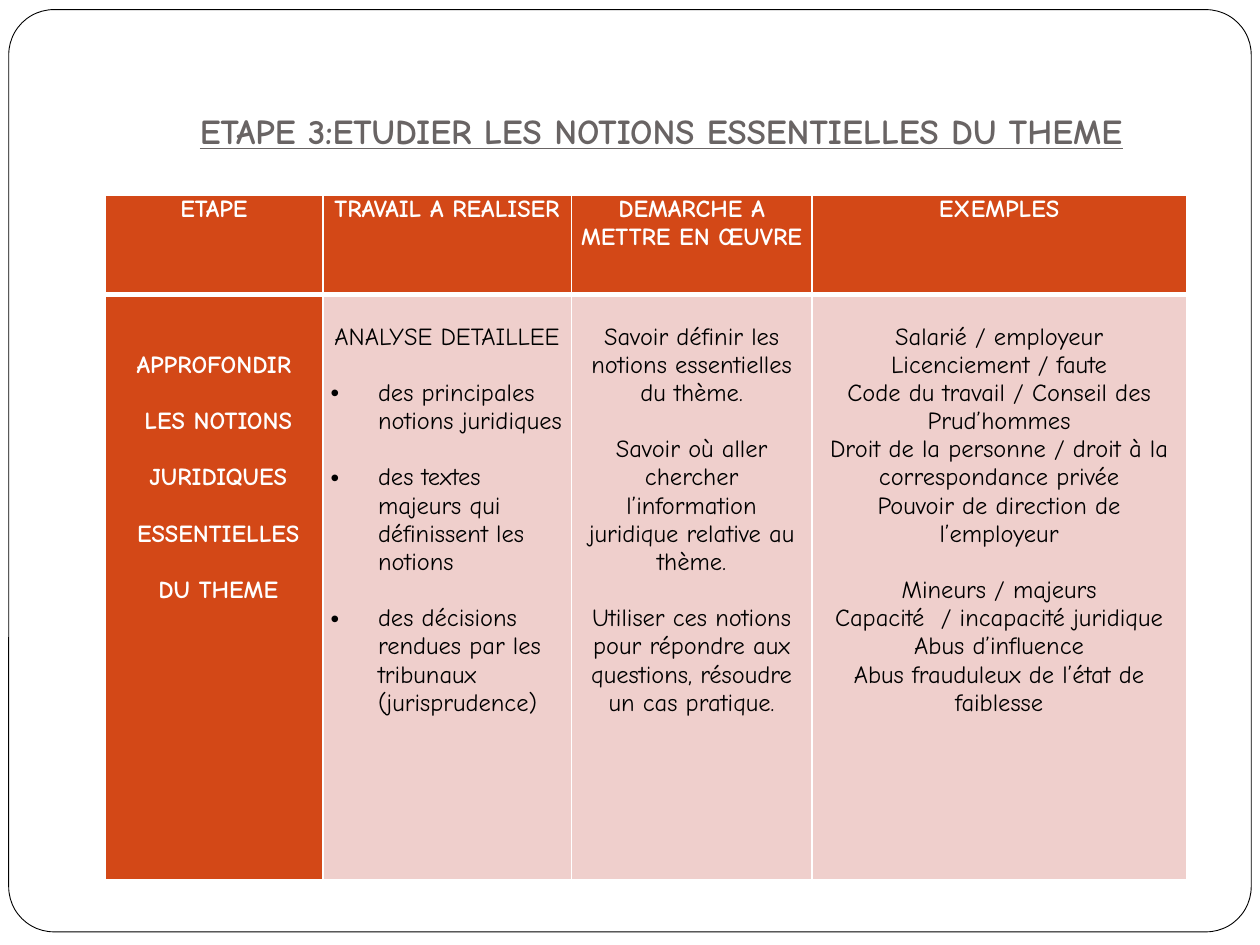
import dataclasses

import lxml.etree
import pptx
import pptx.dml.color
import pptx.enum.shapes
import pptx.enum.text
import pptx.oxml.ns
import pptx.util

Pt = pptx.util.Pt
Align = pptx.enum.text.PP_ALIGN


@dataclasses.dataclass(frozen=True)
class Theme:
    font: str = "Comic Neue"
    title_size: float = 20
    body_size: float = 14
    line_height: float = 16.1
    white: str = "FFFFFF"
    black: str = "000000"
    grey: str = "696464"
    orange: str = "D34817"
    pink: str = "EFCFCC"


@dataclasses.dataclass(frozen=True)
class Item:
    text: str
    gap: bool = False
    bullet: bool = False


def rgb(value):
    return pptx.dml.color.RGBColor.from_string(value)


def add_xml(parent, tag, **attributes):
    return lxml.etree.SubElement(parent, pptx.oxml.ns.qn(tag), attributes)


def set_values(target, values):
    for name, value in values.items():
        setattr(target, name, value)


class SlideBuilder:
    """Draws themed elements on the current slide."""

    def __init__(self, slide, theme):
        self.slide = slide
        self.theme = theme

    def frame(self, left, top, width, height):
        box = self.slide.shapes.add_shape(
            pptx.enum.shapes.MSO_SHAPE.ROUNDED_RECTANGLE,
            Pt(left), Pt(top), Pt(width), Pt(height))
        box.adjustments[0] = 0.049
        box.shadow.inherit = False
        box.fill.solid()
        box.fill.fore_color.rgb = rgb(self.theme.white)
        box.line.color.rgb = rgb(self.theme.black)
        box.line.width = Pt(0.5)

    def add_span(self, para, text, color, **values):
        span = para.add_run()
        span.text = text
        span.font.color.rgb = rgb(color)
        set_values(span.font, {"name": self.theme.font, **values})

    def title(self, text, left, top, width, height):
        box = self.slide.shapes.add_textbox(Pt(left), Pt(top), Pt(width), Pt(height))
        frame = box.text_frame
        set_values(frame, {
            "word_wrap": True, "margin_bottom": Pt(7.2),
            "vertical_anchor": pptx.enum.text.MSO_ANCHOR.BOTTOM})
        para = frame.paragraphs[0]
        para.alignment = Align.CENTER
        self.add_span(para, text, self.theme.grey, bold=True, underline=True,
                      size=Pt(self.theme.title_size))

    def borders(self, cell, **widths):
        properties = cell._tc.get_or_add_tcPr()
        for side in "LRTB":
            line = add_xml(properties, f"a:ln{side}", w=str(Pt(widths.get(side, 1))))
            fill = add_xml(line, "a:solidFill")
            add_xml(fill, "a:srgbClr", val=self.theme.white)

    def bullet(self, para):
        properties = para._p.get_or_add_pPr()
        properties.set("marL", str(Pt(27)))
        properties.set("indent", str(-Pt(27)))
        add_xml(properties, "a:buFont", typeface="Arial")
        add_xml(properties, "a:buChar", char="•")

    def cell(self, cell, items, fill, color, bold, top_lines):
        set_values(cell, {
            "margin_left": Pt(4.5), "margin_right": Pt(4.5), "margin_bottom": 0,
            "margin_top": Pt(top_lines * self.theme.line_height)})
        cell.fill.solid()
        cell.fill.fore_color.rgb = rgb(fill)
        frame = cell.text_frame
        for index, item in enumerate(items):
            para = frame.add_paragraph() if index else frame.paragraphs[0]
            para.alignment = Align.LEFT if item.bullet else Align.CENTER
            if item.gap:
                para.space_before = Pt(self.theme.line_height)
            if item.bullet:
                self.bullet(para)
            self.add_span(para, item.text, color, bold=bold, size=Pt(self.theme.body_size))

    def table(self, headers, columns, left, top, widths, heights):
        theme = self.theme
        table = self.slide.shapes.add_table(
            2, len(widths), Pt(left), Pt(top), Pt(sum(widths)), Pt(sum(heights))).table
        table.horz_banding = False
        for row, height in zip(table.rows, heights):
            row.height = Pt(height)
        for index, (header, items, width) in enumerate(zip(headers, columns, widths)):
            table.columns[index].width = Pt(width)
            head, body = table.cell(0, index), table.cell(1, index)
            self.borders(head, B=3)
            self.borders(body, T=3)
            self.cell(head, [Item(header)], theme.orange, theme.white, True, 0)
            if index:
                self.cell(body, items, theme.pink, theme.black, False, 1)
            else:
                self.cell(body, items, theme.orange, theme.white, True, 2)


HEADERS = ["ETAPE", "TRAVAIL A REALISER", "DEMARCHE A METTRE EN ŒUVRE", "EXEMPLES"]
STEP = [Item("APPROFONDIR")] + [
    Item(text, gap=True)
    for text in (" LES NOTIONS", " JURIDIQUES", " ESSENTIELLES", " DU THEME")]
WORK = [Item("ANALYSE DETAILLEE")] + [
    Item(text, gap=True, bullet=True)
    for text in ("des principales notions juridiques",
                 "des textes majeurs qui définissent les notions",
                 "des décisions rendues par les tribunaux (jurisprudence)")]
METHOD = [
    Item("Savoir définir les notions essentielles du thème."),
    Item("Savoir où aller chercher l’information juridique relative au thème.", gap=True),
    Item("Utiliser ces notions pour répondre aux questions, résoudre un cas pratique.",
         gap=True),
]
EXAMPLES = [
    Item("Salarié / employeur"),
    Item("Licenciement / faute"),
    Item("Code du travail / Conseil des Prud’hommes"),
    Item("Droit de la personne / droit à la correspondance privée"),
    Item("Pouvoir de direction de l’employeur"),
    Item("Mineurs / majeurs", gap=True),
    Item("Capacité  / incapacité juridique"),
    Item("Abus d’influence"),
    Item("Abus frauduleux de l’état de faiblesse"),
]


def main():
    deck = pptx.Presentation()
    set_values(deck, {"slide_width": Pt(720), "slide_height": Pt(540)})
    page = SlideBuilder(deck.slides.add_slide(deck.slide_layouts[6]), Theme())
    page.frame(5, 5.5, 710, 527)
    page.title("ETAPE 3:ETUDIER LES NOTIONS ESSENTIELLES DU THEME", 72, 26, 612, 67.5)
    page.table(HEADERS, [STEP, WORK, METHOD, EXAMPLES], 60, 111.5,
               widths=[124.5, 142, 137.5, 214], heights=[57, 334.5])
    deck.save("out.pptx")


if __name__ == "__main__":
    main()
